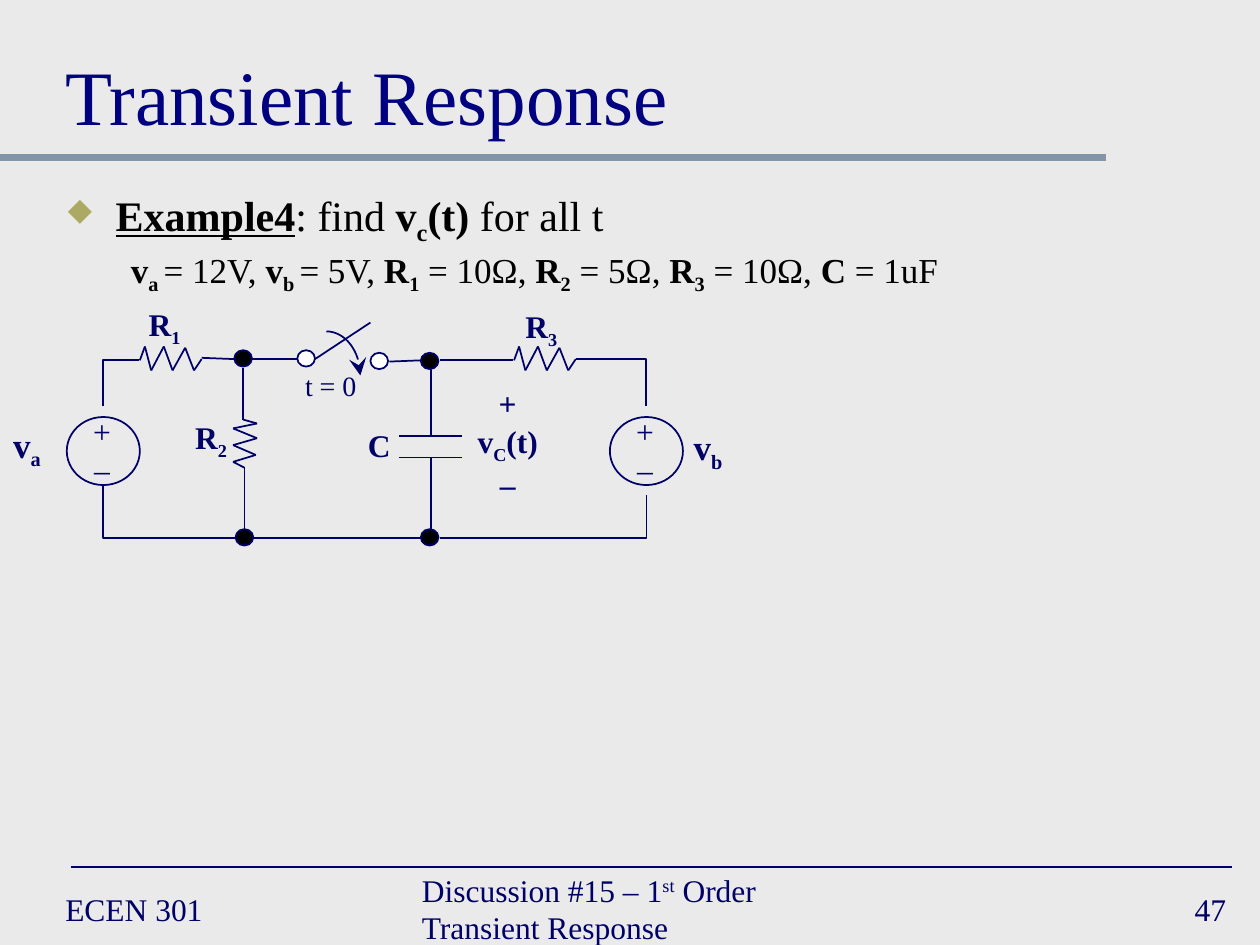
from math import cos, pi, sin

from lxml.etree import SubElement
from pptx import Presentation
from pptx.dml.color import RGBColor as Rgb
from pptx.enum.shapes import MSO_CONNECTOR as Link, MSO_SHAPE as Preset
from pptx.enum.text import MSO_ANCHOR as Anchor, PP_ALIGN as Align
from pptx.oxml.ns import qn
from pptx.util import Cm, Pt

THEME = dict(
    font="Times New Roman", paper="EAEAEA", ink="000066", title="000080",
    body="000000", rule="8495A9", bullet="ACA964", node="000000", contact="FFFFFF",
    title_pt=44, example_pt=24, given_pt=20, label_pt=18, time_pt=16,
    wire_pt=1, rule_pt=4,
)

TITLE = [[("Transient Response", "")]]
EXAMPLE = [("Example4", "bu"), (": find ", ""), ("v", "b"), ("c", "b_"),
           ("(t)", "b"), (" for all t", "")]
GIVENS = [("v", "b"), ("a ", "b_"), ("= 12V, ", ""), ("v", "b"), ("b ", "b_"),
          ("= 5V,", ""), (" R", "b"), ("1", "b_"), (" = 10Ω, ", ""), ("R", "b"),
          ("2", "b_"), (" = 5Ω, ", ""), ("R", "b"), ("3", "b_"), (" = 10Ω, ", ""),
          ("C ", "b"), ("= 1uF", "")]
FOOTERS = [
    ((0.42, 7, 2.17, 0.42), [("ECEN 301", "")], Align.LEFT),
    ((3.25, 7, 3.83, 0.42), [("Discussion #15 – 1", ""), ("st", "^"),
                             (" Order Transient Response", "")], Align.LEFT),
    ((7.75, 7, 2.08, 0.42), [("47", "")], Align.RIGHT),
]
RULES = [((0, 1.25), (8.78, 1.25), "rule", "rule_pt"),
         ((0.56, 6.88), (9.78, 6.88), "ink", "wire_pt")]

POLARITY = [[("+", "")], [("–", "")]]
LABELS = [
    ((4, 2.39, 0.53, 0.4), [[(" R", "b"), ("3", "b_")]], "label_pt"),
    ((1.01, 2.37, 0.53, 0.4), [[(" R", "b"), ("1", "b_")]], "label_pt"),
    ((1.38, 3.27, 0.53, 0.4), [[(" R", "b"), ("2", "b_")]], "label_pt"),
    ((2.82, 3.33, 0.38, 0.4), [[("C", "b")]], "label_pt"),
    ((0, 3.31, 0.43, 0.43), [[("v", "b"), ("a", "b_")]], "given_pt"),
    ((5.4, 3.33, 0.44, 0.43), [[("v", "b"), ("b", "b_")]], "given_pt"),
    ((2.32, 2.88, 0.61, 0.37), [[("t = 0", "")]], "time_pt"),
    ((3.68, 3, 0.7, 1), [[("+", "b")], [("v", "b"), ("C", "b_"), ("(t)", "b")],
                         [("–", "b")]], "label_pt"),
]
SOURCES = [(0.53, 3.31), (4.84, 3.31)]
NODES = [(1.86, 2.78), (1.87, 4.2), (3.34, 2.8), (3.34, 4.2)]
CONTACTS = [(2.36, 2.78), (2.94, 2.8)]
WIRES = [
    ((4.07, 2.86), (3.49, 2.86)), ((1.86, 2.85), (1.6, 2.84)),
    ((1.94, 4.2), (1.94, 3.71)), ((1.93, 2.92), (1.93, 3.33)),
    ((2, 2.85), (2.36, 2.85)), ((3.09, 2.87), (3.34, 2.86)),
    ((3.42, 2.93), (3.42, 3.46)), ((3.42, 4.2), (3.42, 3.63)),
    ((2.01, 4.27), (3.34, 4.27)),
]
SWITCH_BLADE = ((2.5, 2.85), (2.94, 2.56))
SWITCH_SWING = (2.59, 2.63, 0.27, 0.35)
CAPACITOR_PLATES = [((3.17, y), (3.67, y)) for y in (3.46, 3.63)]
CORNERS = [((1.87, 4.27), (0.82, 3.85)), ((4.57, 2.85), (5.13, 3.22)),
           ((1.1, 2.86), (0.82, 3.22)), ((3.49, 4.27), (5.13, 3.93))]
ZIGZAG = [(0, 0), (0.04, -0.11), (0.09, 0.08), (0.19, -0.11), (0.26, 0.08),
          (0.36, -0.1), (0.43, 0.08), (0.49, -0.01)]
RESISTORS = [((1.11, 2.86), False), ((4.08, 2.86), False), ((1.93, 3.33), True)]
UPRIGHT_SCALE = 0.78


def inches(*values):
    return [Cm(value * 2.54) for value in values]


def color(key):
    return Rgb.from_string(THEME[key])


def write(paragraph, runs, size, ink):
    for words, style in runs:
        run = paragraph.add_run()
        run.text = words
        font = run.font
        font.name, font.size = THEME["font"], Pt(THEME[size])
        font.color.rgb = color(ink)
        font.bold, font.underline = "b" in style, "u" in style
        for mark, baseline in (("_", "-25000"), ("^", "30000")):
            if mark in style:
                run._r.get_or_add_rPr().set("baseline", baseline)


def text(slide, box, paragraphs, size, ink="ink", align=Align.LEFT,
         anchor=Anchor.TOP, wrap=False):
    frame = slide.shapes.add_textbox(*inches(*box)).text_frame
    frame.word_wrap, frame.vertical_anchor = wrap, anchor
    for index, runs in enumerate(paragraphs):
        paragraph = frame.add_paragraph() if index else frame.paragraphs[0]
        paragraph.alignment = align
        write(paragraph, runs, size, ink)
    return frame


def line(slide, start, end, ink="ink", width="wire_pt", kind=Link.STRAIGHT):
    wire = slide.shapes.add_connector(kind, *inches(*start, *end))
    wire.line.color.rgb, wire.line.width = color(ink), Pt(THEME[width])
    properties = wire._element.spPr
    SubElement(properties, qn("a:effectLst"))
    if kind == Link.ELBOW:
        properties.find(qn("a:prstGeom")).set("prst", "bentConnector2")


def outline(shape, fill=None):
    shape.shadow.inherit = False
    shape.line.color.rgb, shape.line.width = color("ink"), Pt(THEME["wire_pt"])
    if fill:
        shape.fill.solid()
        shape.fill.fore_color.rgb = color(fill)
    else:
        shape.fill.background()


def ellipse(slide, corner, size, fill=None):
    outline(slide.shapes.add_shape(Preset.OVAL, *inches(*corner, *size)), fill)


def resistor(slide, origin, upright):
    x, y = origin
    points = [(x - across, y + along * UPRIGHT_SCALE) if upright
              else (x + along, y + across) for along, across in ZIGZAG]
    for start, end in zip(points, points[1:]):
        line(slide, start, end)


def swing_arrow(slide):
    left, top, width, height = SWITCH_SWING
    angles = [pi / 2 * step / 16 for step in range(17)]
    points = [inches(left + width * sin(a), top + height * (1 - cos(a))) for a in angles]
    builder = slide.shapes.build_freeform(*points[0])
    builder.add_line_segments(points[1:], close=False)
    arrow = builder.convert_to_shape()
    outline(arrow)
    SubElement(arrow.line._get_or_add_ln(), qn("a:tailEnd"), type="stealth", w="lg", len="lg")


def body(slide):
    frame = text(slide, (0.44, 1.46, 8.81, 1.12), [EXAMPLE], "example_pt", "body", wrap=True)
    example, givens = frame.paragraphs[0], frame.add_paragraph()
    write(givens, GIVENS, "given_pt", "body")
    for paragraph, margin, hang in ((example, 0.38, 0.38), (givens, 0.81, 0.31)):
        paragraph.line_spacing = 0.9
        layout = paragraph._p.get_or_add_pPr()
        layout.set("marL", str(Cm(margin * 2.54)))
        layout.set("indent", str(-Cm(hang * 2.54)))
    givens.space_before = Pt(4)
    layout = example._p.get_or_add_pPr()
    SubElement(SubElement(layout, qn("a:buClr")), qn("a:srgbClr"), val=THEME["bullet"])
    SubElement(layout, qn("a:buSzPct"), val="75000")
    SubElement(layout, qn("a:buChar"), char="◆")


def circuit(slide):
    for start, end in CORNERS:
        line(slide, start, end, kind=Link.ELBOW)
    for start, end in WIRES + CAPACITOR_PLATES + [SWITCH_BLADE]:
        line(slide, start, end)
    for origin, upright in RESISTORS:
        resistor(slide, origin, upright)
    swing_arrow(slide)
    for corners, fill in ((NODES, "node"), (CONTACTS, "contact")):
        for corner in corners:
            ellipse(slide, corner, (0.14, 0.13), fill)
    for x, y in SOURCES:
        ellipse(slide, (x, y), (0.58, 0.54))
        text(slide, (x + 0.11, y - 0.09, 0.34, 0.7), POLARITY, "label_pt", align=Align.CENTER)
    for box, paragraphs, size in LABELS:
        text(slide, box, paragraphs, size, align=Align.CENTER)


def main():
    deck = Presentation()
    deck.slide_width, deck.slide_height = inches(10, 7.5)
    slide = deck.slides.add_slide(deck.slide_layouts[6])
    slide.background.fill.solid()
    slide.background.fill.fore_color.rgb = color("paper")
    for start, end, ink, width in RULES:
        line(slide, start, end, ink, width)
    for box, runs, align in FOOTERS:
        text(slide, box, [runs], "label_pt", align=align, anchor=Anchor.MIDDLE)
    text(slide, (0.42, 0.17, 9.17, 1), TITLE, "title_pt", "title",
         anchor=Anchor.BOTTOM, wrap=True)
    body(slide)
    circuit(slide)
    deck.save("out.pptx")


if __name__ == "__main__":
    main()
